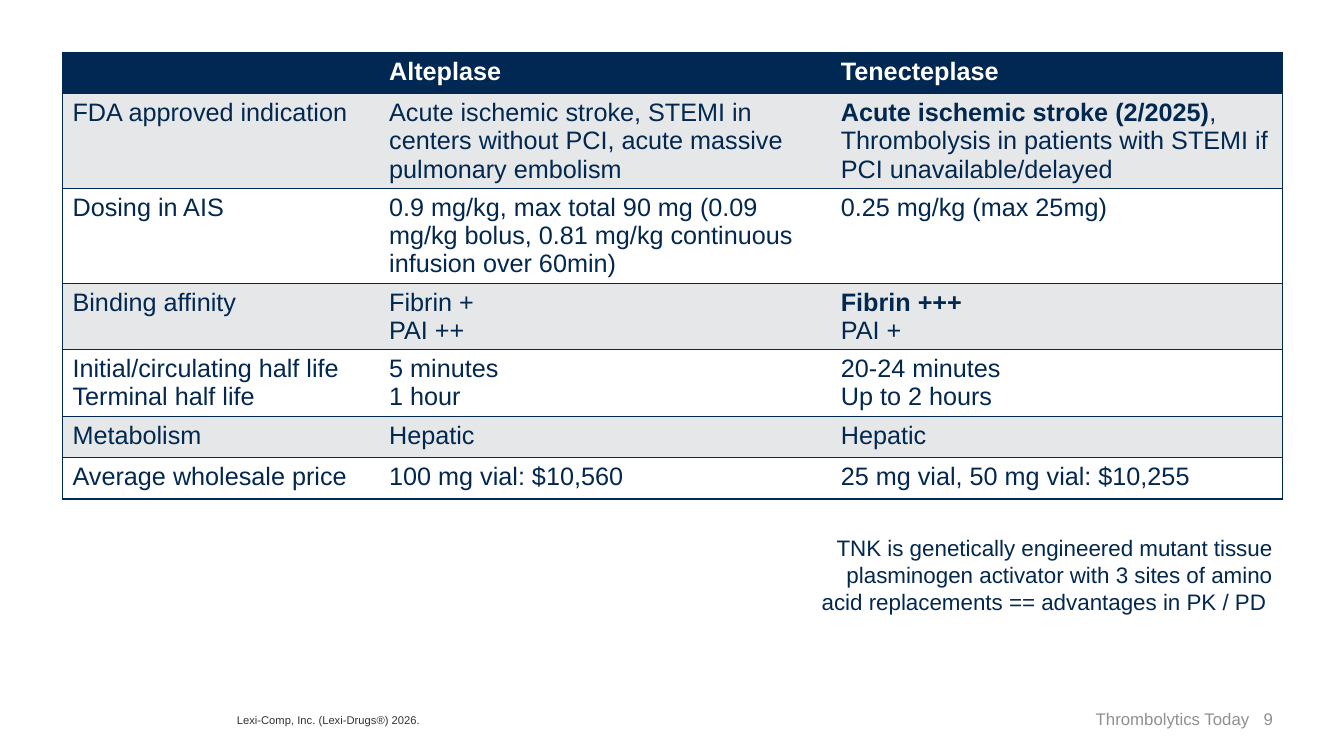
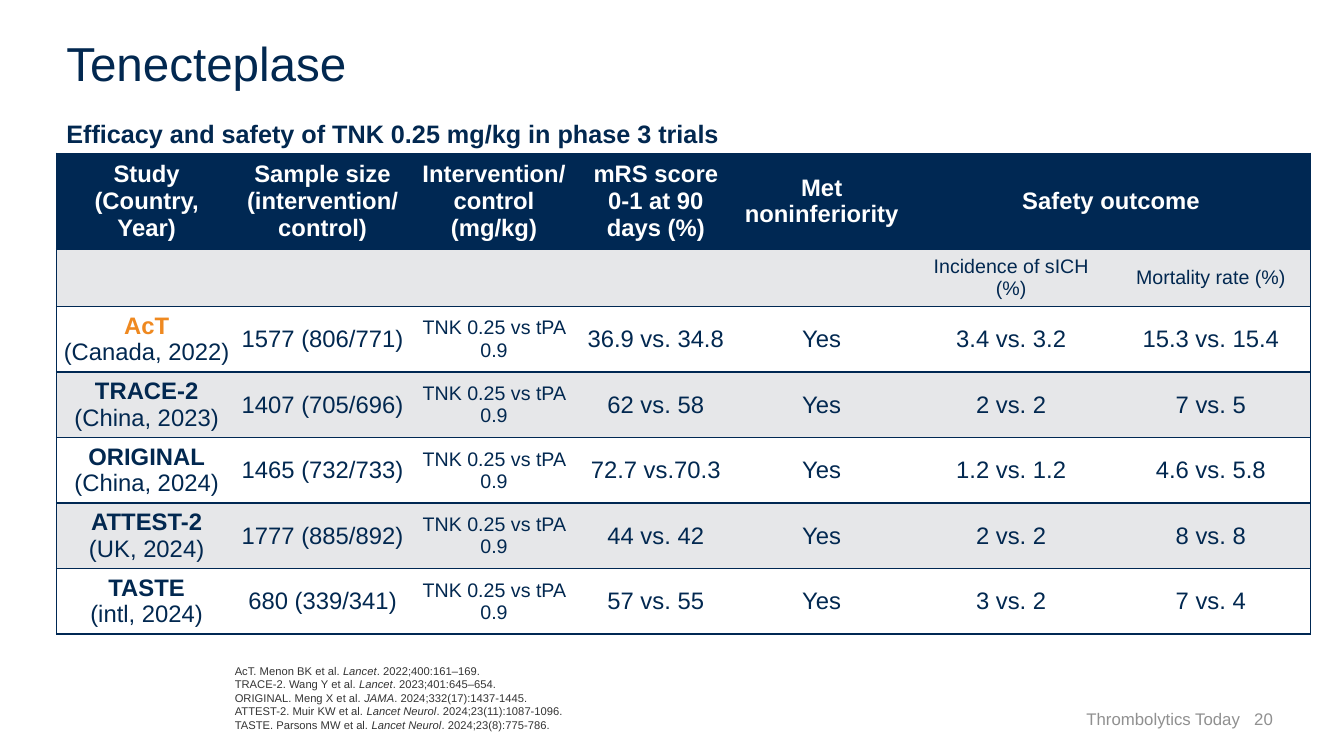
"""Build two slides of tables comparing thrombolytics and phase 3 trials."""
from dataclasses import dataclass
from typing import Any, Optional, Union

from lxml.etree import SubElement
from pptx import Presentation
from pptx.dml.color import RGBColor
from pptx.enum.text import MSO_ANCHOR as Anchor, MSO_AUTO_SIZE as AutoSize, PP_ALIGN as Align
from pptx.oxml import parse_xml
from pptx.oxml.ns import nsdecls, qn
from pptx.presentation import Presentation as Deck
from pptx.slide import Slide
from pptx.table import Table, _Cell as Cell
from pptx.text.text import TextFrame
from pptx.util import Inches, Pt


@dataclass(frozen=True)
class Theme:
    font: str = "Arial"
    navy: str = "002853"
    ink: str = "022850"
    white: str = "FFFFFF"
    band: str = "E6E7E9"
    orange: str = "EF8920"
    footer_gray: str = "909090"
    source_gray: str = "343434"
    title: float = 34
    heading: float = 18
    trial: float = 17
    note: float = 16
    detail: float = 14
    footer: float = 12
    source: float = 8


THEME = Theme()


@dataclass(frozen=True)
class Span:
    text: str
    bold: Optional[bool] = None
    italic: bool = False
    color: Optional[str] = None
    spacing: float = 0


Line = Union[str, list[Span]]


@dataclass(frozen=True)
class Style:
    size: float
    color: str = THEME.ink
    bold: bool = False
    align: Align = Align.LEFT
    anchor: Anchor = Anchor.TOP
    line_spacing: float = 1.0


@dataclass(frozen=True)
class Box:
    left: float
    top: float
    width: float
    height: float


@dataclass(frozen=True)
class Entry:
    lines: list[Line]
    style: Style
    margin_x: float = 0.1
    margin_y: float = 0.05


@dataclass(frozen=True)
class Grid:
    left: float
    top: float
    columns: list[float]
    rows: list[float]


def apply(target: Any, formats: dict[str, Any]) -> None:
    """Set each named attribute on the target."""
    for name, value in formats.items():
        setattr(target, name, value)


def write(frame: TextFrame, lines: list[Line], style: Style) -> None:
    """Write the lines as styled paragraphs."""
    for index, line in enumerate(lines):
        paragraph = frame.add_paragraph() if index else frame.paragraphs[0]
        apply(paragraph, {"alignment": style.align, "line_spacing": style.line_spacing})
        for span in [Span(line)] if isinstance(line, str) else line:
            run = paragraph.add_run()
            run.text = span.text
            apply(run.font, {
                "name": THEME.font,
                "size": Pt(style.size),
                "bold": style.bold if span.bold is None else span.bold,
                "italic": span.italic,
            })
            run.font.color.rgb = RGBColor.from_string(span.color or style.color)
            if span.spacing:
                run.font._element.set("spc", str(round(span.spacing * 100)))


def add_text(slide: Slide, box: Box, lines: list[Line], style: Style) -> None:
    """Add a wrapping text box."""
    shape = slide.shapes.add_textbox(
        Inches(box.left), Inches(box.top), Inches(box.width), Inches(box.height))
    apply(shape.text_frame, {
        "word_wrap": True, "auto_size": AutoSize.NONE, "vertical_anchor": style.anchor})
    write(shape.text_frame, lines, style)


def add_footer(slide: Slide, number: int) -> None:
    """Add the running title and page number."""
    style = Style(THEME.footer, THEME.footer_gray, align=Align.RIGHT,
                  anchor=Anchor.BOTTOM, line_spacing=0.9)
    line = [Span("Thrombolytics Today"), Span(" ", spacing=6.67), Span(f"{number} ")]
    add_text(slide, Box(7.61, 6.95, 5.16, 0.33), [line], style)


def set_borders(cell: Cell, edges: dict[str, bool]) -> None:
    """Draw or clear the cell edges, given in left, right, top, bottom order."""
    properties = cell._tc.get_or_add_tcPr()
    for index, (edge, visible) in enumerate(edges.items()):
        border = parse_xml(f'<a:ln{edge} {nsdecls("a")} w="{Pt(1)}"/>')
        if visible:
            fill = SubElement(border, qn("a:solidFill"))
            SubElement(fill, qn("a:srgbClr")).set("val", THEME.navy)
        else:
            SubElement(border, qn("a:noFill"))
        properties.insert(index, border)


def add_table(slide: Slide, grid: Grid, entries: list[list[Entry]],
              merge: Optional[tuple[int, int]] = None) -> Table:
    """Add a banded table, merging a range of header columns if given."""
    table = slide.shapes.add_table(
        len(grid.rows), len(grid.columns), Inches(grid.left), Inches(grid.top),
        Inches(sum(grid.columns)), Inches(sum(grid.rows))).table
    for column, width in zip(table.columns, grid.columns):
        column.width = Inches(width)
    for row, height in zip(table.rows, grid.rows):
        row.height = Inches(height)
    if merge:
        table.cell(0, merge[0]).merge(table.cell(0, merge[1]))
    for row_index, row in enumerate(entries):
        fill = THEME.band if row_index % 2 else THEME.white
        for column_index, entry in enumerate(row):
            cell = table.cell(row_index, column_index)
            cell.fill.solid()
            cell.fill.fore_color.rgb = RGBColor.from_string(fill if row_index else THEME.navy)
            apply(cell, {
                "margin_left": Inches(entry.margin_x), "margin_right": Inches(entry.margin_x),
                "margin_top": Inches(entry.margin_y), "margin_bottom": Inches(entry.margin_y),
                "vertical_anchor": entry.style.anchor,
            })
            write(cell.text_frame, entry.lines, entry.style)
            set_borders(cell, {
                "L": column_index == 0,
                "R": column_index + cell.span_width >= len(grid.columns),
                "T": True, "B": True,
            })
    return table


def build_comparison(slide: Slide) -> None:
    """Compare the two drugs."""
    header = Style(THEME.heading, THEME.white, bold=True)
    body = Style(THEME.heading)
    rows: list[list[list[Line]]] = [
        [[], ["Alteplase"], ["Tenecteplase"]],
        [["FDA approved indication"],
         ["Acute ischemic stroke, STEMI in centers without PCI, "
          "acute massive pulmonary embolism"],
         [[Span("Acute ischemic stroke (2/2025)", bold=True),
           Span(", Thrombolysis in patients with STEMI if PCI unavailable/delayed")]]],
        [["Dosing in AIS"],
         ["0.9 mg/kg, max total 90 mg (0.09 mg/kg bolus, "
          "0.81 mg/kg continuous infusion over 60min)"],
         ["0.25 mg/kg (max 25mg)"]],
        [["Binding affinity"], ["Fibrin +", "PAI ++"],
         [[Span("Fibrin +++", bold=True)], "PAI +"]],
        [["Initial/circulating half life", "Terminal half life"],
         ["5 minutes", "1 hour"], ["20-24 minutes", "Up to 2 hours"]],
        [["Metabolism"], ["Hepatic"], ["Hepatic"]],
        [["Average wholesale price"], ["100 mg vial: $10,560"],
         ["25 mg vial, 50 mg vial: $10,255"]],
    ]
    entries = [[Entry(lines, body if index else header) for lines in row]
               for index, row in enumerate(rows)]
    grid = Grid(0.62, 0.52, [3.14, 4.48, 4.48], [0.41, 0.94, 0.94, 0.66, 0.66, 0.41, 0.41])
    add_table(slide, grid, entries)
    add_text(slide, Box(2.25, 7.03, 5.08, 0.24), ["Lexi-Comp, Inc. (Lexi-Drugs®) 2026."],
             Style(THEME.source, THEME.source_gray))
    add_text(slide, Box(8.04, 5.25, 4.68, 0.91),
             ["TNK is genetically engineered mutant tissue plasminogen activator with "
              "3 sites of amino acid replacements == advantages in PK / PD "],
             Style(THEME.note, align=Align.RIGHT))


def build_trials(slide: Slide) -> None:
    """Tabulate the phase 3 trials."""
    centered = {"align": Align.CENTER, "anchor": Anchor.MIDDLE}
    header = Style(THEME.trial, THEME.white, bold=True, **centered)
    body = Style(THEME.trial, **centered)
    detail = Style(THEME.detail, **centered)
    headings: list[list[Line]] = [
        ["Study", "(Country, Year)"], ["Sample size", "(intervention/", "control)"],
        ["Intervention/", "control (mg/kg)"], ["mRS score 0-1 at 90 days (%)"],
        ["Met noninferiority"], ["Safety outcome"], [],
    ]
    subheadings: list[list[Line]] = [
        *[[] for _ in range(5)], ["Incidence of sICH (%)"], ["Mortality rate (%)"]]
    trials = [
        ("AcT", "Canada, 2022", "1577 (806/771)", "36.9 vs. 34.8", "3.4 vs. 3.2", "15.3 vs. 15.4"),
        ("TRACE-2", "China, 2023", "1407 (705/696)", "62 vs. 58", "2 vs. 2", "7 vs. 5"),
        ("ORIGINAL", "China, 2024", "1465 (732/733)", "72.7 vs.70.3", "1.2 vs. 1.2", "4.6 vs. 5.8"),
        ("ATTEST-2", "UK, 2024", "1777 (885/892)", "44 vs. 42", "2 vs. 2", "8 vs. 8"),
        ("TASTE", "intl, 2024", "680 (339/341)", "57 vs. 55", "3 vs. 2", "7 vs. 4"),
    ]
    entries = [[Entry(lines, header) for lines in headings],
               [Entry(lines, detail) for lines in subheadings]]
    for index, (name, place, sample, score, bleeding, mortality) in enumerate(trials):
        study = [Span(name, bold=True, color=None if index else THEME.orange)]
        cells: list[tuple[list[Line], Style]] = [
            ([study, f"({place})"], body), ([sample], body), (["TNK 0.25 vs tPA 0.9"], detail),
            ([score], body), (["Yes"], body), ([bleeding], body), ([mortality], body),
        ]
        entries.append([Entry(lines, style, 0.04, 0.04) for lines, style in cells])
    grid = Grid(0.56, 1.52, [1.79, 1.7, 1.7, 1.51, 1.78, 1.98, 1.98],
                [0.95, 0.57] + [0.65] * len(trials))
    add_text(slide, Box(0.56, 0.47, 10, 0.49), ["Tenecteplase"],
             Style(THEME.title, anchor=Anchor.BOTTOM, line_spacing=0.9))
    add_table(slide, grid, entries, merge=(5, 6))
    add_text(slide, Box(0.56, 1.12, 7.2, 0.4),
             ["Efficacy and safety of TNK 0.25 mg/kg in phase 3 trials"],
             Style(THEME.heading, bold=True))
    references = [
        ("AcT. Menon BK et al. ", "Lancet", ". 2022;400:161–169."),
        ("TRACE-2. Wang Y et al. ", "Lancet", ". 2023;401:645–654."),
        ("ORIGINAL. Meng X et al. ", "JAMA", ". 2024;332(17):1437-1445."),
        ("ATTEST-2. Muir KW et al. ", "Lancet Neurol", ". 2024;23(11):1087-1096."),
        ("TASTE. Parsons MW et al. ", "Lancet Neurol", ". 2024;23(8):775-786."),
    ]
    add_text(slide, Box(2.23, 6.54, 5.08, 0.77),
             [[Span(authors), Span(journal, italic=True), Span(issue)]
              for authors, journal, issue in references],
             Style(THEME.source, THEME.source_gray))


def main() -> None:
    """Build and save the presentation."""
    presentation: Deck = Presentation()
    apply(presentation, {"slide_width": Inches(13.33), "slide_height": Inches(7.5)})
    for build, number in ((build_comparison, 9), (build_trials, 20)):
        slide = presentation.slides.add_slide(presentation.slide_layouts[6])
        add_footer(slide, number)
        build(slide)
    presentation.save("out.pptx")


if __name__ == "__main__":
    main()
